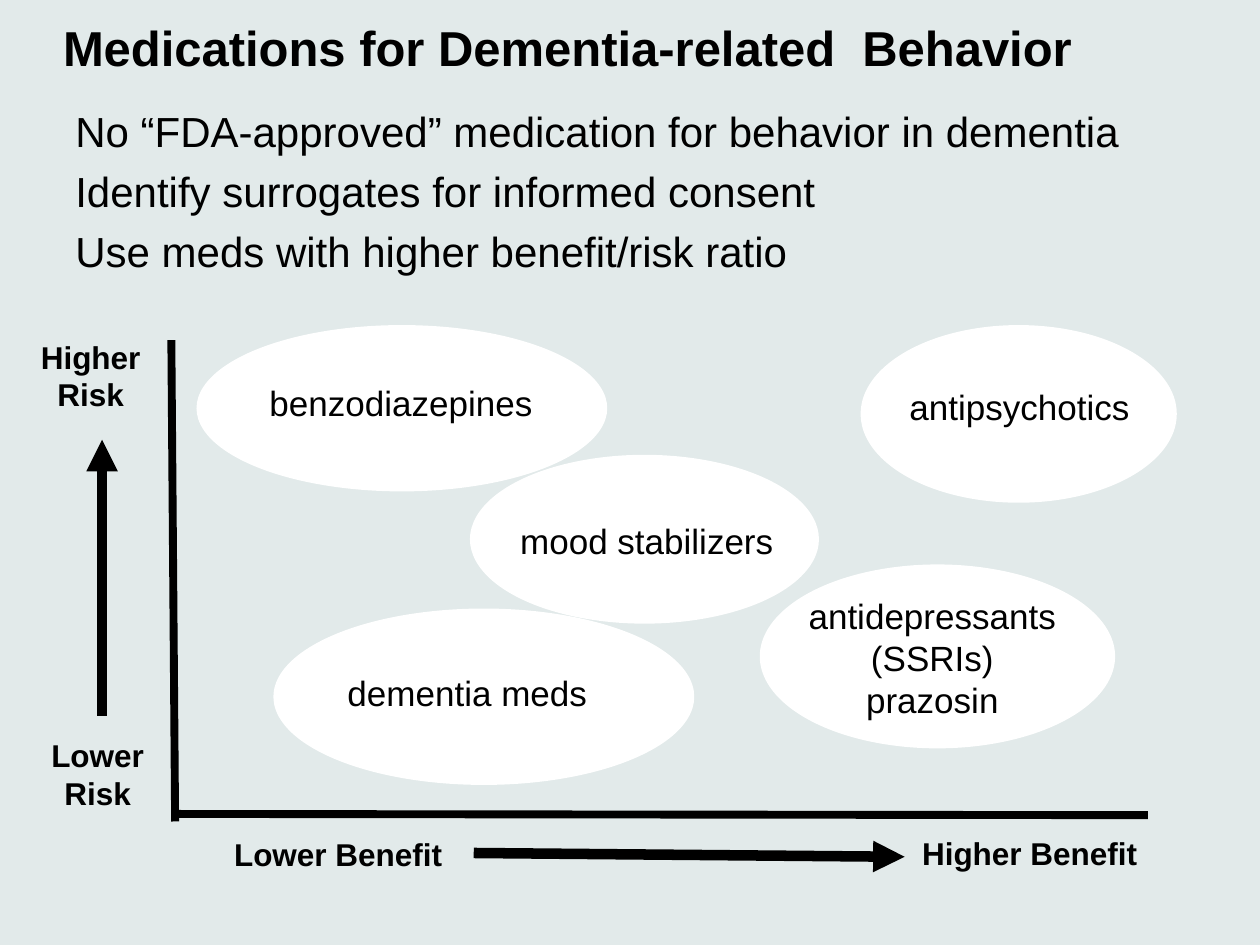
from dataclasses import dataclass

from lxml.etree import SubElement
from pptx import Presentation
from pptx.dml.color import RGBColor
from pptx.enum.shapes import MSO_CONNECTOR, MSO_SHAPE
from pptx.enum.text import MSO_ANCHOR, PP_ALIGN
from pptx.oxml.ns import qn
from pptx.slide import Slide
from pptx.util import Inches, Pt


@dataclass(frozen=True)
class Theme:
    font: str = "Arial"
    background: RGBColor = RGBColor(0xE2, 0xEA, 0xEA)
    ink: RGBColor = RGBColor(0, 0, 0)
    bubble: RGBColor = RGBColor(0xFF, 0xFF, 0xFF)
    title_size: float = 28
    body_size: float = 24
    medication_size: float = 20
    axis_size: float = 18
    axis_width: float = 4.5
    arrow_width: float = 6


THEME = Theme()


@dataclass(frozen=True)
class Box:
    left: float
    top: float
    width: float
    height: float

    def lengths(self) -> tuple[Inches, ...]:
        return tuple(map(Inches, (self.left, self.top, self.width, self.height)))


@dataclass(frozen=True)
class Label:
    text: str
    box: Box
    size: float
    bold: bool = False
    align: PP_ALIGN = PP_ALIGN.LEFT
    wrap: bool = True
    anchor: MSO_ANCHOR = MSO_ANCHOR.TOP
    insets: tuple[float, float] = (0.1, 0.05)
    space_before: float = 0


@dataclass(frozen=True)
class Stroke:
    start: tuple[float, float]
    end: tuple[float, float]
    width: float
    arrow: bool = False


def axis_label(text: str, box: Box, align: PP_ALIGN = PP_ALIGN.LEFT) -> Label:
    return Label(text, box, THEME.axis_size, bold=True, align=align, wrap=False)


def medication(text: str, box: Box, align: PP_ALIGN = PP_ALIGN.LEFT) -> Label:
    return Label(text, box, THEME.medication_size, align=align)


HEADINGS = [
    Label("Medications for Dementia-related  Behavior", Box(0.5, 0.08, 8.92, 0.53),
          THEME.title_size, bold=True, anchor=MSO_ANCHOR.BOTTOM, insets=(0, 0)),
    Label("No “FDA-approved” medication for behavior in dementia\n"
          "Identify surrogates for informed consent\n"
          "Use meds with higher benefit/risk ratio",
          Box(0.5, 0.83, 9.36, 1.15), THEME.body_size,
          insets=(0.1, 0.01), space_before=5.5),
]

STROKES = [
    Stroke((1.39, 6.52), (1.36, 2.7), THEME.axis_width),
    Stroke((1.42, 6.46), (9.11, 6.47), THEME.axis_width),
    Stroke((0.81, 5.68), (0.81, 3.49), THEME.arrow_width, arrow=True),
    Stroke((3.76, 6.77), (7.18, 6.8), THEME.arrow_width, arrow=True),
]

BUBBLES = [
    Box(1.56, 2.58, 3.26, 1.32),
    Box(3.73, 3.61, 2.77, 1.34),
    Box(2.17, 4.83, 3.34, 1.4),
    Box(6.83, 2.58, 2.51, 1.41),
    Box(6.03, 4.48, 2.82, 1.46),
]

CHART_LABELS = [
    medication("benzodiazepines", Box(2.04, 2.98, 2.3, 0.44)),
    medication("mood stabilizers", Box(4.03, 4.07, 2.3, 0.44)),
    medication("dementia meds", Box(2.66, 5.28, 2.3, 0.44)),
    medication("antipsychotics", Box(7.12, 3.01, 2.3, 0.44)),
    medication("antidepressants\n(SSRIs)\nprazosin", Box(6.23, 4.67, 2.34, 1.11),
               PP_ALIGN.CENTER),
    axis_label("Higher\nRisk", Box(0.22, 2.63, 1, 0.71), PP_ALIGN.CENTER),
    axis_label("Lower\nRisk", Box(0.3, 5.79, 0.95, 0.71), PP_ALIGN.CENTER),
    axis_label("Lower Benefit", Box(1.76, 6.58, 1.87, 0.4)),
    axis_label("Higher Benefit", Box(7.22, 6.57, 1.93, 0.4)),
]


def draw_label(slide: Slide, label: Label) -> None:
    frame = slide.shapes.add_textbox(*label.box.lengths()).text_frame
    frame.word_wrap = label.wrap
    frame.vertical_anchor = label.anchor
    side, edge = map(Inches, label.insets)
    frame.margin_left = frame.margin_right = side
    frame.margin_top = frame.margin_bottom = edge
    frame.text = label.text
    for paragraph in frame.paragraphs:
        paragraph.alignment = label.align
        paragraph.space_before = Pt(label.space_before)
        for run in paragraph.runs:
            run.font.name = THEME.font
            run.font.size = Pt(label.size)
            run.font.bold = label.bold
            run.font.color.rgb = THEME.ink


def draw_stroke(slide: Slide, stroke: Stroke) -> None:
    connector = slide.shapes.add_connector(
        MSO_CONNECTOR.STRAIGHT, *map(Inches, stroke.start + stroke.end))
    connector.line.width = Pt(stroke.width)
    connector.line.color.rgb = THEME.ink
    if stroke.arrow:
        SubElement(connector.line._get_or_add_ln(), qn("a:tailEnd"), type="triangle")
    SubElement(connector._element.spPr, qn("a:effectLst"))


def draw_bubble(slide: Slide, box: Box) -> None:
    bubble = slide.shapes.add_shape(MSO_SHAPE.OVAL, *box.lengths())
    bubble.shadow.inherit = False
    bubble.fill.solid()
    bubble.fill.fore_color.rgb = THEME.bubble
    bubble.line.fill.background()


def main() -> None:
    presentation = Presentation()
    presentation.slide_width = Inches(10)
    presentation.slide_height = Inches(7.5)
    slide = presentation.slides.add_slide(presentation.slide_layouts[6])
    slide.background.fill.solid()
    slide.background.fill.fore_color.rgb = THEME.background

    for heading in HEADINGS:
        draw_label(slide, heading)
    for stroke in STROKES:
        draw_stroke(slide, stroke)
    for bubble in BUBBLES:
        draw_bubble(slide, bubble)
    for label in CHART_LABELS:
        draw_label(slide, label)

    presentation.save("out.pptx")


if __name__ == "__main__":
    main()
